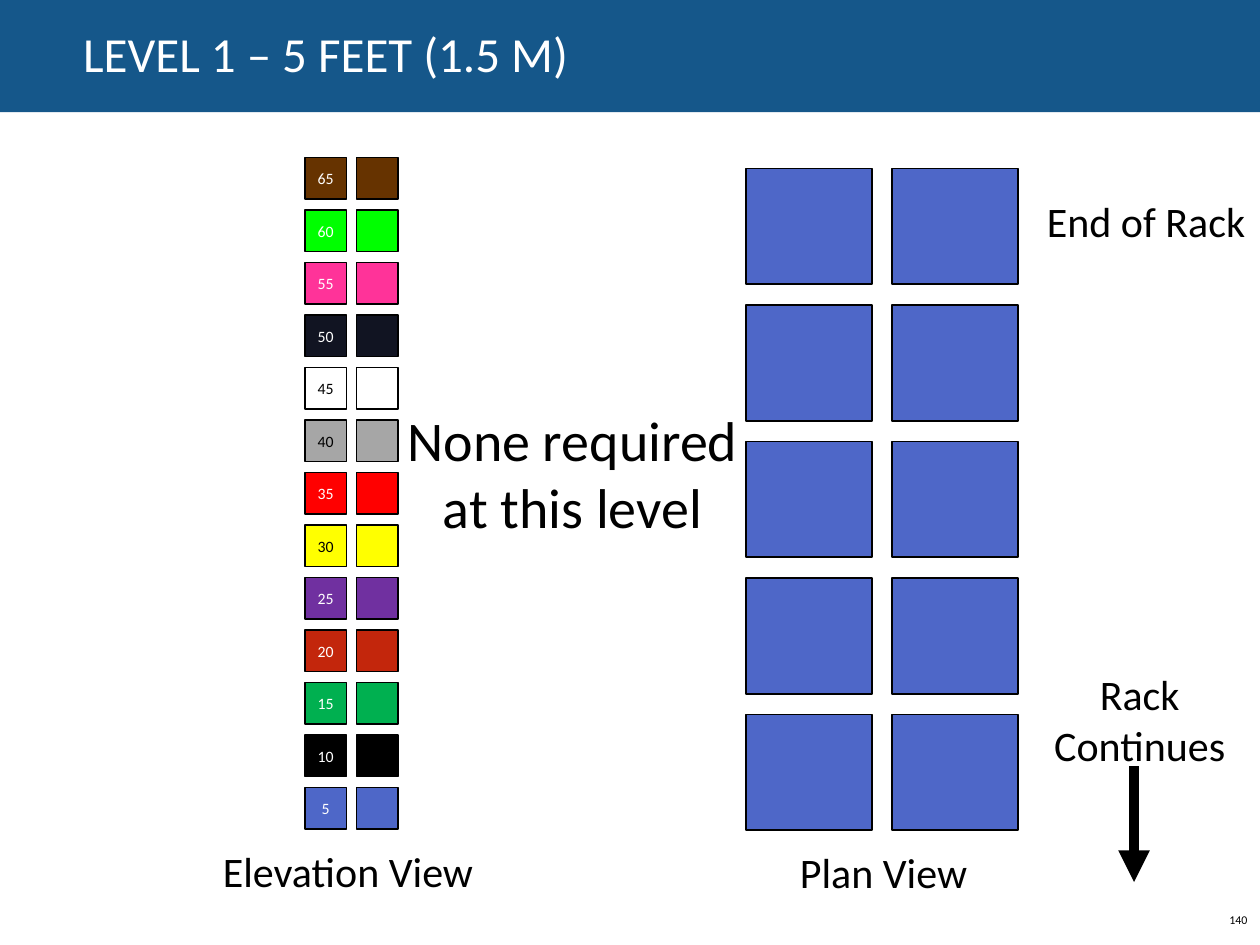
import pptx
import pptx.util
import pptx.dml.color
import pptx.enum.shapes
import pptx.enum.text
import pptx.oxml
import pptx.oxml.ns

Inches = pptx.util.Inches
Pt = pptx.util.Pt
ALIGN = pptx.enum.text.PP_ALIGN
MIDDLE = pptx.enum.text.MSO_ANCHOR.MIDDLE

COLORS = {
    "banner": "15578A", "white": "FFFFFF", "black": "000000",
    "blue": "4E67C8", "green": "00B050", "brick": "C3260C",
    "purple": "7030A0", "yellow": "FFFF00", "red": "FF0000",
    "gray": "A6A6A6", "navy": "111422", "pink": "FF3399",
    "lime": "00FF00", "brown": "663300",
}
# Rack levels from the floor up: fill and label colour
LEVELS = [
    ("blue", "white"), ("black", "white"), ("green", "white"),
    ("brick", "white"), ("purple", "white"), ("yellow", "black"),
    ("red", "white"), ("gray", "black"), ("white", "black"),
    ("navy", "white"), ("pink", "white"), ("lime", "white"),
    ("brown", "white"),
]


def rgb(name):
    return pptx.dml.color.RGBColor.from_string(COLORS[name])


def write(shape, text, size, color, align, **frame_format):
    frame = shape.text_frame
    for attribute, value in frame_format.items():
        setattr(frame, attribute, value)
    paragraph = frame.paragraphs[0]
    paragraph.text = text
    paragraph.alignment = align
    for attribute, value in {"name": "Calibri", "size": Pt(size)}.items():
        setattr(paragraph.font, attribute, value)
    paragraph.font.color.rgb = rgb(color)


deck = pptx.Presentation()
deck.slide_width, deck.slide_height = Inches(10), Inches(7.5)
slide = deck.slides.add_slide(deck.slide_layouts[5])
shapes = slide.shapes
RECTANGLE = pptx.enum.shapes.MSO_SHAPE.RECTANGLE

# Banner, placed behind the title
banner = shapes.add_shape(RECTANGLE, 0, 0, Inches(10), Inches(0.89))
banner.shadow.inherit = False
banner.fill.solid()
banner.fill.fore_color.rgb = rgb("banner")
banner.line.fill.background()
shapes.title.element.addprevious(banner.element)

# Title
title = shapes.title
title_place = {"left": 0.56, "top": -0.17, "width": 9, "height": 1.25}
for attribute, value in title_place.items():
    setattr(title, attribute, Inches(value))
write(title, "LEVEL 1 – 5 FEET (1.5 M)", 28, "white", ALIGN.LEFT,
      vertical_anchor=MIDDLE, word_wrap=True,
      auto_size=pptx.enum.text.MSO_AUTO_SIZE.NONE)
title.text_frame.paragraphs[0].line_spacing = 0.85

# Elevation boxes (only the left column is labelled), then plan boxes
boxes = []
for column in range(2):
    for row, (fill, label_color) in enumerate(LEVELS):
        label = str(5 * (row + 1)) if column == 0 else ""
        boxes.append((2.42 + column * 0.41, 6.25 - row * 5 / 12, 0.33, 0.33,
                      fill, label, label_color))
for column in range(2):
    for row in range(5):
        boxes.append((5.92 + column * 1.16, 5.67 - row * 13 / 12, 1, 0.92,
                      "blue", "", "white"))

for left, top, width, height, fill, label, label_color in boxes:
    box = shapes.add_shape(RECTANGLE, Inches(left), Inches(top),
                           Inches(width), Inches(height))
    box.shadow.inherit = False
    box.fill.solid()
    box.fill.fore_color.rgb = rgb(fill)
    box.line.color.rgb = rgb("black")
    box.line.width = Pt(1)
    if label:
        write(box, label, 9, label_color, ALIGN.CENTER,
              vertical_anchor=MIDDLE, word_wrap=False)

# Captions: text, left, top, width, height, size, alignment, wrap
captions = [
    ("Elevation View", 1.67, 6.66, 2.27, 0.5, 24, ALIGN.LEFT, False),
    ("Plan View", 6.25, 6.67, 1.59, 0.5, 24, ALIGN.LEFT, False),
    ("None required at this level", 3.13, 3.17, 2.83, 1.18, 32,
     ALIGN.CENTER, True),
    ("End of Rack", 8.21, 1.5, 1.79, 0.5, 24, ALIGN.LEFT, False),
    ("Rack Continues", 8.17, 5.26, 1.75, 0.91, 24, ALIGN.CENTER, True),
]
for text, left, top, width, height, size, align, wrap in captions:
    caption = shapes.add_textbox(Inches(left), Inches(top),
                                 Inches(width), Inches(height))
    write(caption, text, size, "black", align, word_wrap=wrap)

# Arrow towards the rest of the rack
rack_arrow = shapes.add_connector(
    pptx.enum.shapes.MSO_CONNECTOR.STRAIGHT,
    Inches(9), Inches(6.08), Inches(9), Inches(7))
rack_arrow.line.color.rgb = rgb("black")
rack_arrow.line.width = Pt(6)
arrowhead = pptx.oxml.parse_xml(
    f'<a:tailEnd {pptx.oxml.ns.nsdecls("a")} type="triangle"/>')
rack_arrow.line._get_or_add_ln().append(arrowhead)
no_shadow = pptx.oxml.parse_xml(
    f'<a:effectLst {pptx.oxml.ns.nsdecls("a")}/>')
rack_arrow.element.spPr.append(no_shadow)

# Slide number
page_number = shapes.add_textbox(Inches(9.6), Inches(7.1),
                                 Inches(0.4), Inches(0.4))
write(page_number, "140", 6.8, "black", ALIGN.RIGHT,
      vertical_anchor=MIDDLE, word_wrap=True, margin_left=Inches(0.05))

deck.save("out.pptx")
